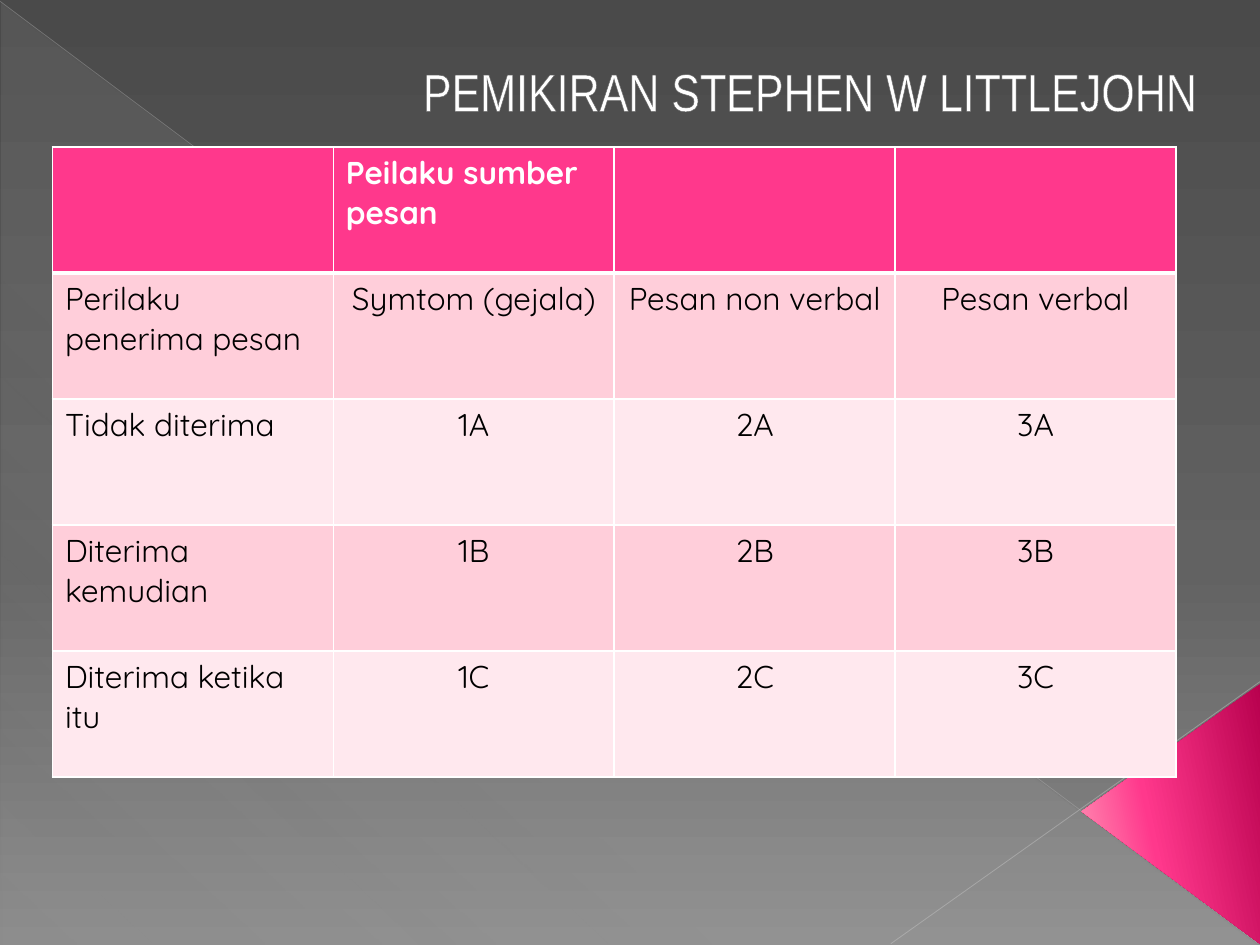
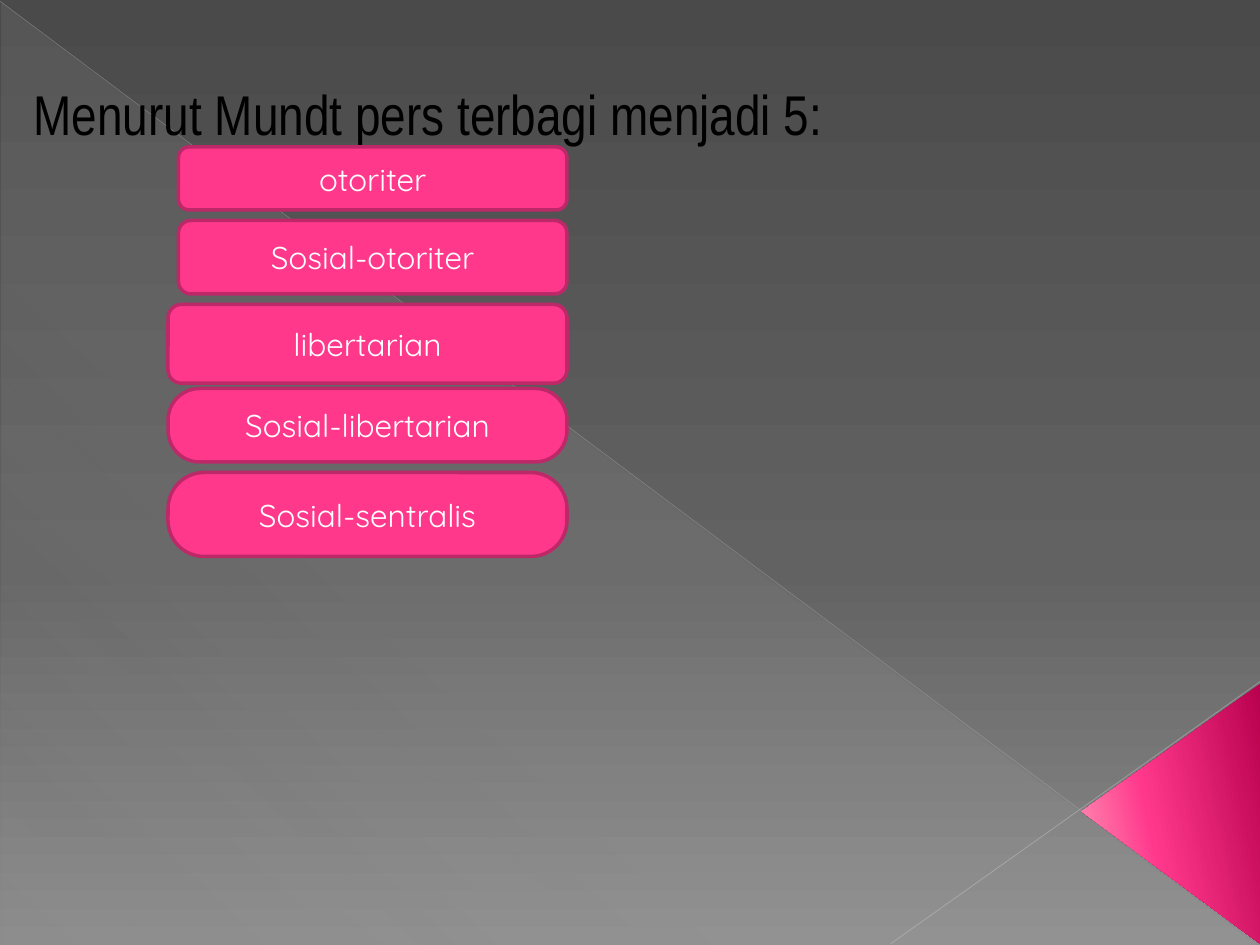
from lxml import etree
from pptx import Presentation
from pptx import util as u
from pptx.dml.color import RGBColor
from pptx.enum import shapes, text
from pptx.oxml.ns import qn

HUES = {
    "pink": "FF388C", "rose": "FFCEDA", "blush": "FFE8EE", "wine": "BD2968",
    "deep": "B8014E", "soft": "FF9CB9", "white": "FFFFFF", "black": "000000",
    "coal": "4A4A4A", "slate": "626262", "ash": "8C8C8C", "mist": "D2D2D2",
    "ray": "BFBFBF", "beam": "C6C6C6", "edge": "666666",
}
COLS, ROWS = 120, 90
HEAD, BODY = "Arial Narrow", "Quicksand"
SHAPE = shapes.MSO_SHAPE
LEFT, MID, RIGHT = text.PP_ALIGN.LEFT, text.PP_ALIGN.CENTER, text.PP_ALIGN.RIGHT


def rgb(hue):
    return RGBColor.from_string(HUES[hue])


def add(node, tag, **attrs):
    return etree.SubElement(node, qn(tag), {k: str(v) for k, v in attrs.items()})


def tint(node, hue, alpha=100):
    color = add(node, "a:srgbClr", val=HUES[hue])
    if alpha < 100:
        add(color, "a:alpha", val=alpha * 1000)


def stroke(tag, hue, width):
    line = etree.Element(qn(tag), {"w": str(u.Pt(width))})
    tint(add(line, "a:solidFill"), hue)
    return line


class Deck:
    def __init__(self):
        self.prs = Presentation()
        self.prs.slide_width, self.prs.slide_height = u.Inches(10), u.Inches(7.5)
        self.base = self.prs.slide_layouts[5]
        self.slide = None

    def grid(self, *cells):
        wide, high = self.prs.slide_width / COLS, self.prs.slide_height / ROWS
        return [round(n * (high if i % 2 else wide)) for i, n in enumerate(cells)]

    def page(self):
        first = self.slide is None
        self.slide = self.prs.slides.add_slide(self.base)
        if first:
            self.dress()

    def dress(self):
        self.blend(self.base.background.fill, self.base.element, 90,
                   (0, "coal", 100), (60, "slate", 100), (100, "ash", 100))
        veil = self.shape(SHAPE.RIGHT_TRIANGLE, (0.12, 0.24, 119.76, 89.76))
        self.blend(veil.fill, veil.element, 133,
                   (0, "mist", 10), (70, "mist", 8), (100, "mist", 1))
        ray = self.line((0, 0.12, 119.88, 89.88), "ray", 0.39, 35)
        beam = self.line((120, 64.92, 84.84, 89.88), "beam", 0.47, 45)
        wedge = self.shape(SHAPE.ISOSCELES_TRIANGLE, (99.12, 69, 24.84, 17.04), 0.51)
        wedge.rotation = 270
        self.blend(wedge.fill, wedge.element, 258,
                   (0, "deep", 100), (60, "pink", 100), (100, "soft", 100))
        for i, part in enumerate((veil, ray, beam, wedge)):
            part.element.xpath(".//p:cNvPr")[0].set("id", str(20 + i))
            self.base.shapes.element.insert(2 + i, part.element)

    def blend(self, fill, node, angle, *stops):
        fill.gradient()
        grad = node.xpath(".//a:gradFill")[0]
        for child in list(grad):
            grad.remove(child)
        grad.set("rotWithShape", "1")
        group = add(grad, "a:gsLst")
        for pos, hue, alpha in stops:
            tint(add(group, "a:gs", pos=pos * 1000), hue, alpha)
        add(grad, "a:lin", ang=angle * 60000, scaled=0)

    def shape(self, kind, box, bend=None):
        item = self.slide.shapes.add_shape(kind, *self.grid(*box))
        item.shadow.inherit = False
        item.line.fill.background()
        if bend is not None:
            item.adjustments[0] = bend
        return item

    def line(self, ends, hue, width, alpha):
        item = self.slide.shapes.add_connector(
            shapes.MSO_CONNECTOR.STRAIGHT, *self.grid(*ends))
        item.line.color.rgb = rgb(hue)
        item.line.width = u.Pt(width)
        add(item.element.xpath(".//a:ln//a:srgbClr")[0], "a:alpha", val=alpha * 1000)
        add(item.element.spPr, "a:effectLst")
        return item

    def label(self, frame, words, font, size, hue, align, bold=False):
        frame.text = words
        para = frame.paragraphs[0]
        para.alignment = align
        para.font.name, para.font.size = font, u.Pt(size)
        para.font.color.rgb, para.font.bold = rgb(hue), bold
        return para

    def title(self, words, box, size, hue, align, inset=0.1, rim=None):
        item = self.slide.shapes.title
        item.left, item.top, item.width, item.height = self.grid(*box)
        frame = item.text_frame
        frame.auto_size = text.MSO_AUTO_SIZE.NONE
        frame.vertical_anchor = text.MSO_ANCHOR.TOP
        frame.margin_right = u.Inches(inset)
        para = self.label(frame, words, HEAD, size, hue, align)
        if rim:
            para.runs[0].font.color.rgb = rgb(hue)
            item.element.xpath(".//a:r/a:rPr")[0].insert(0, stroke("a:ln", rim, 0.75))

    def table(self, data, box):
        frame = self.slide.shapes.add_table(len(data), len(data[0]), *self.grid(*box))
        for r, row in enumerate(data):
            for c, words in enumerate(row):
                cell = frame.table.cell(r, c)
                cell.fill.solid()
                cell.fill.fore_color.rgb = rgb(
                    "pink" if r == 0 else "rose" if r % 2 else "blush")
                if words:
                    self.label(cell.text_frame, words, BODY, 18,
                               "black" if r else "white",
                               MID if r and c else LEFT, r == 0)
        for n, props in enumerate(frame.element.xpath(".//a:tcPr")):
            for i, side in enumerate("LRTB"):
                thick = (n // len(data[0]), side) in ((0, "B"), (1, "T"))
                props.insert(i, stroke(f"a:ln{side}", "white", 3 if thick else 1))

    def button(self, words, box, bend):
        item = self.shape(SHAPE.ROUNDED_RECTANGLE, box, bend)
        item.fill.solid()
        item.fill.fore_color.rgb = rgb("pink")
        item.line.color.rgb = rgb("wine")
        item.line.width = u.Pt(2)
        item.text_frame.vertical_anchor = text.MSO_ANCHOR.MIDDLE
        self.label(item.text_frame, words, BODY, 18, "white", MID)


def main():
    deck = Deck()
    deck.page()
    deck.title("PEMIKIRAN STEPHEN W LITTLEJOHN", (3, 5, 113, 82), 30,
               "white", RIGHT, 0.16, "edge")
    states = ("Tidak diterima", "Diterima kemudian", "Diterima ketika itu")
    deck.table([
        ("", "Peilaku sumber pesan", "", ""),
        ("Perilaku penerima pesan", "Symtom (gejala)", "Pesan non verbal", "Pesan verbal"),
        *[(state, *(f"{n}{mark}" for n in (1, 2, 3)))
          for state, mark in zip(states, "ABC")],
    ], (5, 14, 107, 60))

    deck.page()
    deck.title("Menurut Mundt pers terbagi menjadi 5:", (2, 7, 115, 81), 32,
               "black", LEFT)
    for words, left, top, high, bend in (
        ("otoriter", 17, 14, 6, 0.17),
        ("Sosial-otoriter", 17, 21, 7, 0.17),
        ("libertarian", 16, 29, 7.5, 0.17),
        ("Sosial-libertarian", 16, 37, 7, 0.43),
        ("Sosial-sentralis", 16, 45, 8, 0.43),
    ):
        deck.button(words, (left, top, 54 - left, high), bend)
    deck.prs.save("out.pptx")


if __name__ == "__main__":
    main()
